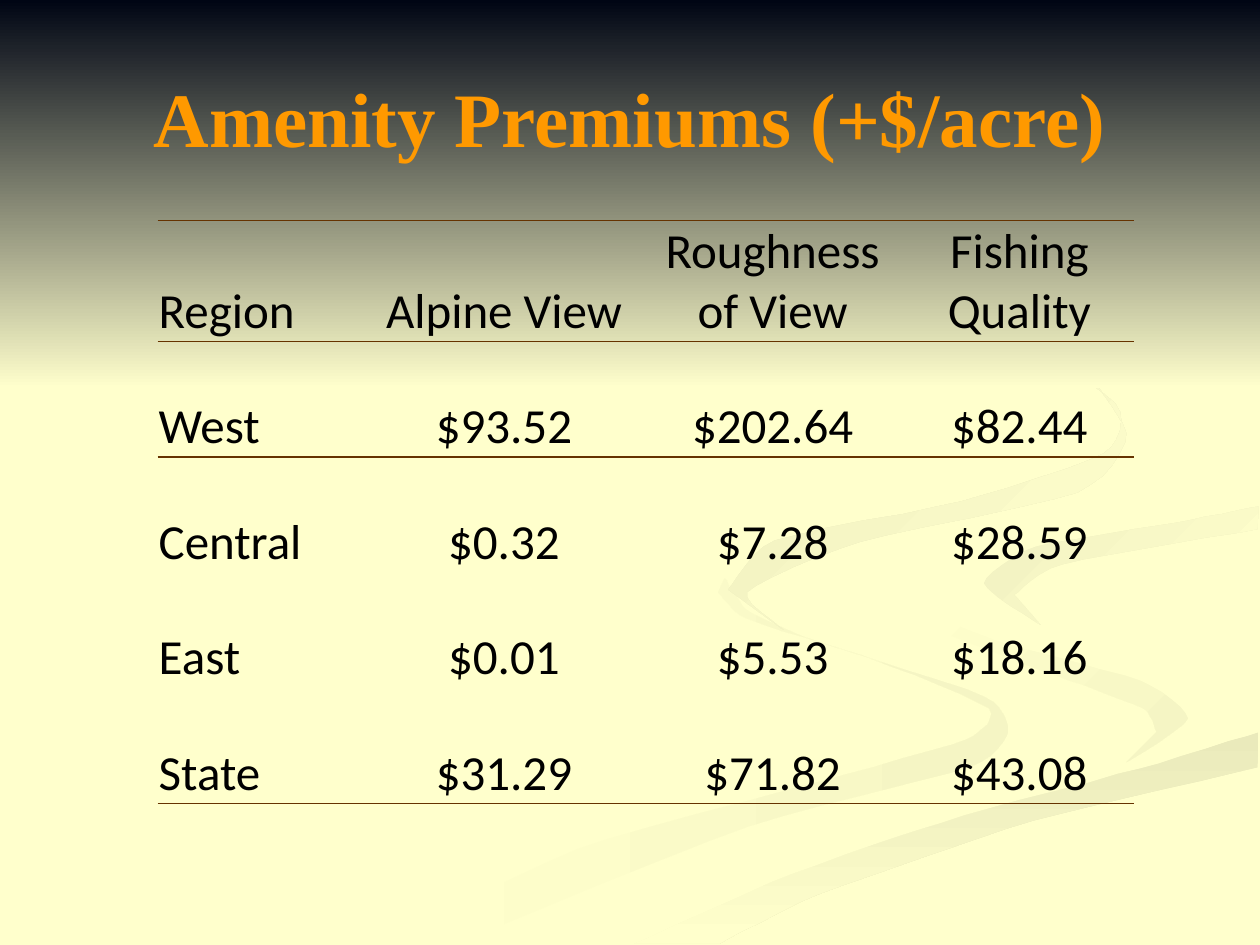
from lxml import etree
from pptx import Presentation
from pptx.dml.color import RGBColor
from pptx.enum.shapes import MSO_SHAPE
from pptx.enum.text import MSO_ANCHOR, PP_ALIGN
from pptx.oxml import parse_xml
from pptx.util import Pt

LEFT, CENTER = PP_ALIGN.LEFT, PP_ALIGN.CENTER
MIDDLE, BOTTOM = MSO_ANCHOR.MIDDLE, MSO_ANCHOR.BOTTOM
RECT = MSO_SHAPE.RECTANGLE

CREAM = RGBColor(0xFF, 0xFF, 0xCC)
NIGHT = RGBColor(0x00, 0x05, 0x14)
ORANGE = RGBColor(0xFF, 0x99, 0x00)
BLACK = RGBColor(0x00, 0x00, 0x00)
BROWN = RGBColor(0x66, 0x33, 0x00)
PALE = RGBColor(0xF5, 0xF5, 0xC4)
SAND = RGBColor(0xF1, 0xF1, 0xC1)
STRAW = RGBColor(0xED, 0xED, 0xBE)
KHAKI = RGBColor(0xEA, 0xEA, 0xBB)

NS = "http://schemas.openxmlformats.org/drawingml/2006/main"
NO_GRID = "{2D5ABB26-0587-4C30-8999-92F81FD0307C}"
UNIT = Pt(0.72)  # ribbon points lie on a grid of 0.72 pt
STEPS = 6        # straight pieces between two points of an edge
BEND = 0.3       # how far an edge swings out at its points

# Edges that two ribbons share
HOOK = [(724, 464), (733, 483), (792, 509), (905, 540), (943, 570)]
SHORE = [(503, 749), (630, 693), (765, 647), (904, 610), (999, 581)]
BAY = [(999, 402), (933, 415), (822, 434), (781, 463)]

# Each ribbon: first colour, last colour, clockwise angle, edges in turn
RIBBONS = [
    (CREAM, PALE, 0, [
        [(575, 459), (594, 485), (642, 507), (781, 553), (800, 581),
         (769, 609), (594, 656), (361, 749)],
        [(300, 749), (458, 674), (652, 620), (767, 587), (785, 562),
         (697, 525), (593, 491), (570, 470)]]),
    (CREAM, PALE, 45, [
        HOOK + [(894, 605)],
        [(918, 581), (907, 562), (838, 536), (746, 500), (724, 464)]]),
    (KHAKI, CREAM, 90, [
        SHORE, [(998, 609), (821, 651), (649, 710), (571, 749)]]),
    (CREAM, CREAM, 0, [
        HOOK + [(902, 603), (663, 668), (477, 749)],
        SHORE, [(999, 538), (904, 519), (804, 485)],
        BAY[::-1], [(999, 387), (851, 411), (755, 432), HOOK[0]]]),
    (SAND, CREAM, 45, [
        BAY + [(826, 496)], [(805, 472), (843, 448), (998, 420)]]),
    (STRAW, CREAM, 45, [
        [(762, 233), (843, 275), (894, 344), (855, 391), (683, 430),
         (593, 470), (622, 500)],
        [(578, 468), (615, 429), (763, 398), (876, 360), (885, 320),
         (762, 233)]]),
]

TABLE = [
    ("Region", "Alpine View", "Roughness of View", "Fishing Quality"),
    ("West", "$93.52", "$202.64", "$82.44"),
    ("Central", "$0.32", "$7.28", "$28.59"),
    ("East", "$0.01", "$5.53", "$18.16"),
    ("State", "$31.29", "$71.82", "$43.08"),
]
WIDTHS = [120, 156, 151, 131]
HEAD, ROW = 69, 66
RULED = {"lnT": (0, 1), "lnB": (0, len(TABLE) - 1)}


def write(frame, text, font="Calibri", size=28, color=BLACK, bold=False, align=CENTER):
    para = frame.paragraphs[0]
    para.alignment = align
    run = para.add_run()
    run.text = text
    run.font.name = font
    run.font.size = Pt(size)
    run.font.bold = bold
    run.font.color.rgb = color


def shade(shape, first, last, angle):
    """Fill with a gradient at a clockwise angle, without line or shadow."""
    shape.shadow.inherit = False
    shape.line.fill.background()
    shape.fill.gradient()
    shape.fill.gradient_angle = (360 - angle) % 360
    for stop, color in zip(shape.fill.gradient_stops, (first, last)):
        stop.color.rgb = color


deck = Presentation()
deck.slide_width, deck.slide_height = Pt(720), Pt(540)
slide = deck.slides.add_slide(deck.slide_layouts[5])
slide.background.fill.solid()
slide.background.fill.fore_color.rgb = CREAM
shapes = slide.shapes

# Ribbons: every edge is a smooth curve through its points
for first, last, angle, edges in RIBBONS:
    points = []
    for edge in edges:
        ends = [edge[0], *edge, edge[-1]]
        for quad in zip(ends, ends[1:], ends[2:], ends[3:]):
            for step in range(STEPS):
                t = step / STEPS
                ease = t * t * (3 - 2 * t)
                out, back = t * (1 - t) ** 2, t * t * (1 - t)
                points.append(tuple(
                    b + (c - b) * ease + BEND * ((c - a) * out - (d - b) * back)
                    for a, b, c, d in zip(*quad)))
        points.append(edge[-1])
    pen = shapes.build_freeform(*points[0], scale=UNIT)
    pen.add_line_segments(points[1:], close=True)
    shade(pen.convert_to_shape(), first, last, angle)

# Dark sky over the tops of the ribbons
sky = shapes.add_shape(RECT, 0, 0, Pt(720), Pt(222))
shade(sky, NIGHT, CREAM, 90)

# Title, brought in front of the sky
title = shapes.title
title.left, title.top, title.width, title.height = Pt(36), Pt(21.6), Pt(648), Pt(90)
title.text_frame.vertical_anchor = MIDDLE
write(title.text_frame, "Amenity Premiums (+$/acre)",
      font="Times New Roman", size=44, color=ORANGE, bold=True)
sky._element.addnext(title._element)

# Table of premiums
height = HEAD + ROW * (len(TABLE) - 1)
grid = shapes.add_table(len(TABLE), len(WIDTHS), Pt(90), Pt(126),
                        Pt(sum(WIDTHS)), Pt(height)).table
grid.first_row = grid.horz_banding = False
grid._tbl.tblPr[0].text = NO_GRID
for col, width in zip(grid.columns, WIDTHS):
    col.width = Pt(width)
for r, texts in enumerate(TABLE):
    grid.rows[r].height = Pt(ROW if r else HEAD)
    for c, text in enumerate(texts):
        cell = grid.cell(r, c)
        cell.vertical_anchor = BOTTOM
        cell.margin_left = cell.margin_right = cell.margin_top = Pt(0.72)
        cell.margin_bottom = 0
        cell.fill.background()
        write(cell.text_frame, text, align=CENTER if c else LEFT)
        props = cell._tc.get_or_add_tcPr()
        sides = [side for side, rows in RULED.items() if r in rows]
        for spot, side in enumerate(sides):
            rule = parse_xml(f'<a:{side} xmlns:a="{NS}" w="{Pt(1)}"/>')
            paint = etree.SubElement(rule, f"{{{NS}}}solidFill")
            etree.SubElement(paint, f"{{{NS}}}srgbClr", val=str(BROWN))
            props.insert(spot, rule)

deck.save("out.pptx")
